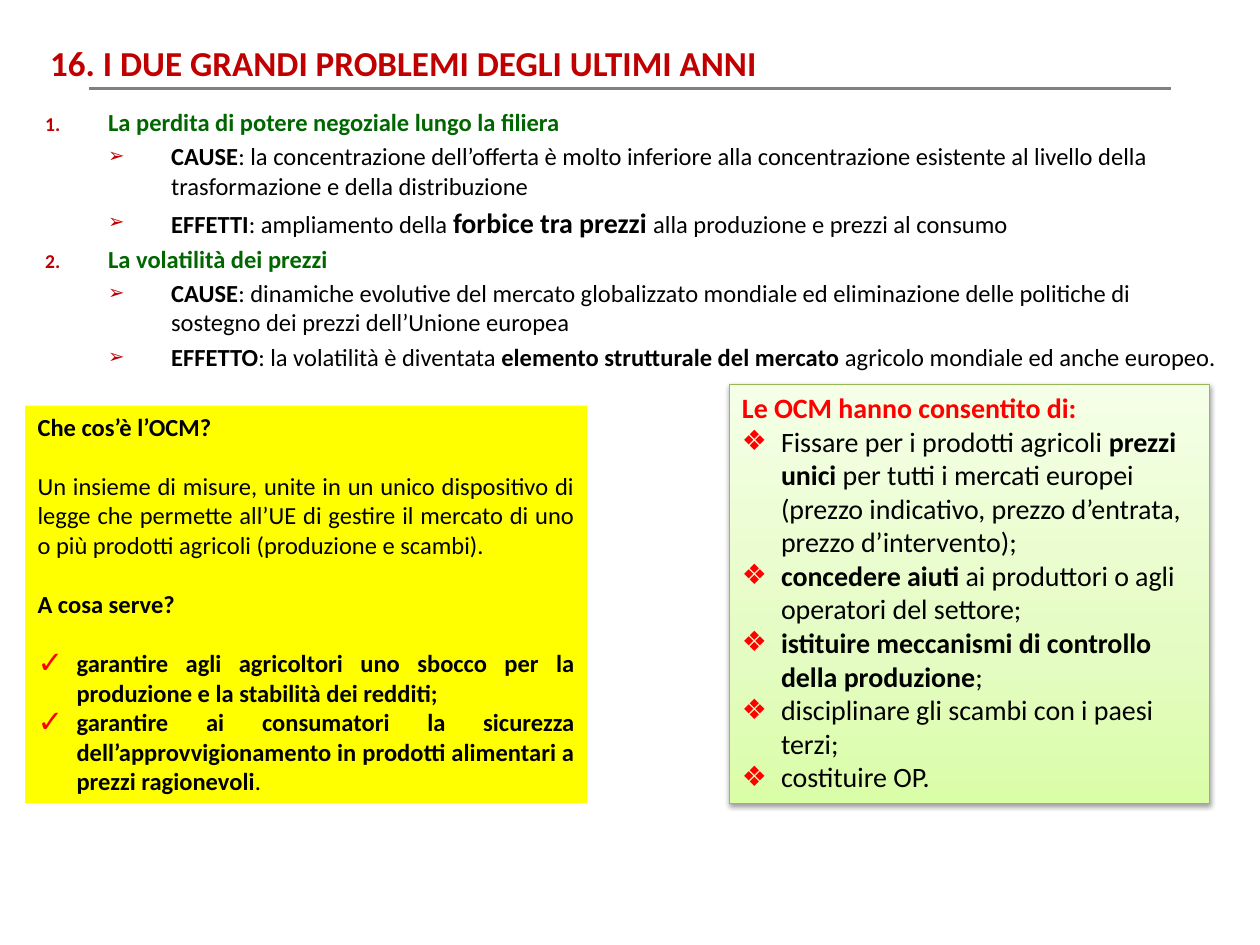
from lxml.etree import SubElement
from pptx import Presentation
from pptx.dml.color import RGBColor
from pptx.enum.shapes import MSO_CONNECTOR, MSO_SHAPE
from pptx.enum.text import MSO_ANCHOR, MSO_AUTO_SIZE, PP_ALIGN
from pptx.oxml.ns import qn
from pptx.util import Inches, Pt

WIDTH, HEIGHT = 10, 7.5
FONT = "Calibri"
COLORS = {
    "title": "C00000", "heading": "006600", "text": "000000", "accent": "FF0000",
    "rule": "808080", "yellow": "FFFF00", "border": "98B955", "shadow": "000000",
}
GREEN_STOPS = [(0, "DAFDA7"), (35, "E4FCC2"), (100, "F5FFE7")]

# Bullet styles: mark (None means automatic number), colour, size %, left indent, hanging, level
BULLETS = {
    "number": (None, "title", 80, 0.5, 0.5, 0),
    "arrow": ("➢", "title", 80, 1, 0.5, 1),
    "check": ("✓", "accent", 125, 0.31, 0.31, 0),
    "diamond": ("❖", "accent", 100, 0.31, 0.31, 0),
}

# Paragraphs: (bullet, runs, extra); runs: (text, bold[, size])
TITLE = [(None, [("16. I DUE GRANDI PROBLEMI DEGLI ULTIMI ANNI", True)], {})]
GREEN = {"color": "heading"}
PROBLEMS = [
    ("number", [("La perdita di potere negoziale lungo la filiera", True)], GREEN),
    ("arrow", [("CAUSE", True),
               (": la concentrazione dell’offerta è molto inferiore alla concentrazione "
                "esistente al livello della trasformazione e della distribuzione", False)], {}),
    ("arrow", [("EFFETTI", True), (": ampliamento della ", False),
               ("forbice tra prezzi ", True, 16),
               ("alla produzione e prezzi al consumo", False)], {}),
    ("number", [("La volatilità dei prezzi", True)], GREEN),
    ("arrow", [("CAUSE", True),
               (": dinamiche evolutive del mercato globalizzato mondiale ed eliminazione "
                "delle politiche di sostegno dei prezzi dell’Unione europea", False)], {}),
    ("arrow", [("EFFETTO", True), (": la volatilità è diventata ", False),
               ("elemento strutturale del mercato ", True),
               ("agricolo mondiale ed anche europeo.", False)], {}),
]
GAP = {"after": 17}
DEFINITION = [
    (None, [("Che cos’è l’OCM?", True)], GAP),
    (None, [("Un insieme di misure, unite in un unico dispositivo di legge che permette "
             "all’UE di gestire il mercato di uno o più prodotti agricoli "
             "(produzione e scambi).", False)], GAP),
    (None, [("A cosa serve?", True)], GAP),
    ("check", [("garantire agli agricoltori uno sbocco per la produzione e la stabilità "
                "dei redditi;", True)], {}),
    ("check", [("garantire ai consumatori la sicurezza dell’approvvigionamento in prodotti "
                "alimentari a prezzi ragionevoli", True), (".", False)], {}),
]
RESULTS = [
    (None, [("Le OCM hanno consentito di:", True)], {"color": "accent"}),
    ("diamond", [("Fissare per i prodotti agricoli ", False), ("prezzi unici", True),
                 (" per tutti i mercati europei (prezzo indicativo, prezzo d’entrata, "
                  "prezzo d’intervento);", False)], {}),
    ("diamond", [("concedere aiuti ", True),
                 ("ai produttori o agli operatori del settore;", False)], {}),
    ("diamond", [("istituire meccanismi di controllo della produzione", True),
                 (";", False)], {}),
    ("diamond", [("disciplinare gli scambi con i paesi terzi;", False)], {}),
    ("diamond", [("costituire OP.", False)], {}),
]


def rgb(name):
    return RGBColor.from_string(COLORS[name])


def add_child(parent, tag, **attributes):
    return SubElement(parent, qn(tag), {key: str(value) for key, value in attributes.items()})


def add_bullet(paragraph, name):
    mark, color, size, left, hanging, level = BULLETS[name]
    paragraph.level = level
    properties = paragraph._p.get_or_add_pPr()
    properties.set("marL", str(Inches(left)))
    properties.set("indent", str(-Inches(hanging)))
    add_child(add_child(properties, "a:buClr"), "a:srgbClr", val=COLORS[color])
    add_child(properties, "a:buSzPct", val=size * 1000)
    if mark:
        add_child(properties, "a:buFont", typeface="Arial")
        add_child(properties, "a:buChar", char=mark)
    else:
        add_child(properties, "a:buFont", typeface=FONT)
        add_child(properties, "a:buAutoNum", type="arabicPeriod")


def write(shape, paragraphs, size, color="text", align=PP_ALIGN.LEFT, before=0):
    frame = shape.text_frame
    frame.word_wrap = True
    frame.vertical_anchor = MSO_ANCHOR.TOP
    for index, (bullet, runs, extra) in enumerate(paragraphs):
        paragraph = frame.add_paragraph() if index else frame.paragraphs[0]
        paragraph.alignment = align
        if bullet:
            add_bullet(paragraph, bullet)
        paragraph.space_before = Pt(before if index else 0)
        paragraph.space_after = Pt(extra.get("after", 0))
        for text, bold, *own_size in runs:
            run = paragraph.add_run()
            run.text = text
            run.font.name = FONT
            run.font.bold = bold
            run.font.size = Pt(own_size[0] if own_size else size)
            run.font.color.rgb = rgb(extra.get("color", color))
    return frame


def place(left, top, width, height):
    return [Inches(value) for value in (left, top, width, height)]


def add_panel(slide, left, top, width, bottom):
    panel = slide.shapes.add_shape(
        MSO_SHAPE.RECTANGLE, *place(left, top, width, bottom - top))
    panel.shadow.inherit = False
    return panel


def style_green(panel):
    """Vertical gradient, thin border and soft shadow below."""
    panel.line.color.rgb = rgb("border")
    panel.line.width = Pt(0.75)
    panel.fill.gradient()
    panel.fill.gradient_angle = 90
    stops = panel._element.spPr.find(qn("a:gradFill")).find(qn("a:gsLst"))
    for stop in list(stops):
        stops.remove(stop)
    for position, color in GREEN_STOPS:
        stop = add_child(stops, "a:gs", pos=position * 1000)
        add_child(stop, "a:srgbClr", val=color)
    effects = panel._element.spPr.find(qn("a:effectLst"))
    shadow = add_child(effects, "a:outerShdw", blurRad=Pt(3.1), dist=Pt(1.6),
                       dir=90 * 60000, rotWithShape=0)
    tint = add_child(shadow, "a:srgbClr", val=COLORS["shadow"])
    add_child(tint, "a:alpha", val=38000)


def main():
    presentation = Presentation()
    presentation.slide_width, presentation.slide_height = Inches(WIDTH), Inches(HEIGHT)
    slide = presentation.slides.add_slide(presentation.slide_layouts[6])

    margin, rule_top = WIDTH * 0.071, 0.7
    rule = slide.shapes.add_connector(
        MSO_CONNECTOR.STRAIGHT, Inches(margin), Inches(rule_top),
        Inches(WIDTH - margin), Inches(rule_top))
    rule.line.color.rgb = rgb("rule")
    rule.line.width = Pt(1.75)
    add_child(rule._element.spPr, "a:effectLst")

    title = slide.shapes.add_textbox(*place(0.3, 0.28, 9.45, 0.44))
    write(title, TITLE, 20, "title").auto_size = MSO_AUTO_SIZE.SHAPE_TO_FIT_TEXT

    problems = slide.shapes.add_textbox(*place(0.26, 0.84, 9.55, 2.76))
    write(problems, PROBLEMS, 14, before=2.8).margin_top = Inches(0.01)

    panel_bottom = HEIGHT * 0.85
    definition = add_panel(slide, 0.2, 3.22, 4.46, panel_bottom)
    definition.fill.solid()
    definition.fill.fore_color.rgb = rgb("yellow")
    definition.line.fill.background()
    write(definition, DEFINITION, 14, align=PP_ALIGN.JUSTIFY)

    results = add_panel(slide, 5.79, 3.05, 3.81, panel_bottom)
    style_green(results)
    write(results, RESULTS, 16)

    presentation.save("out.pptx")


if __name__ == "__main__":
    main()
